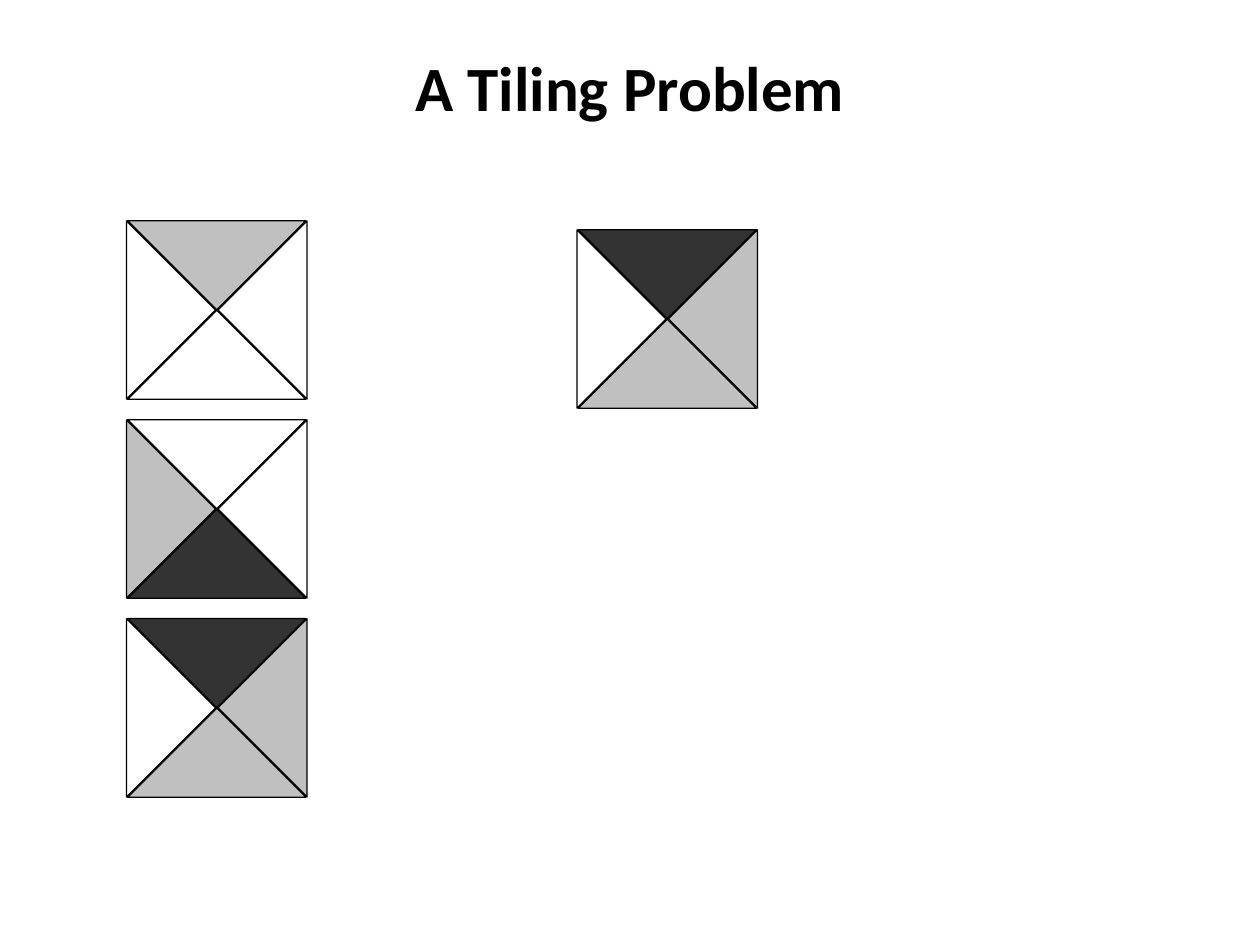
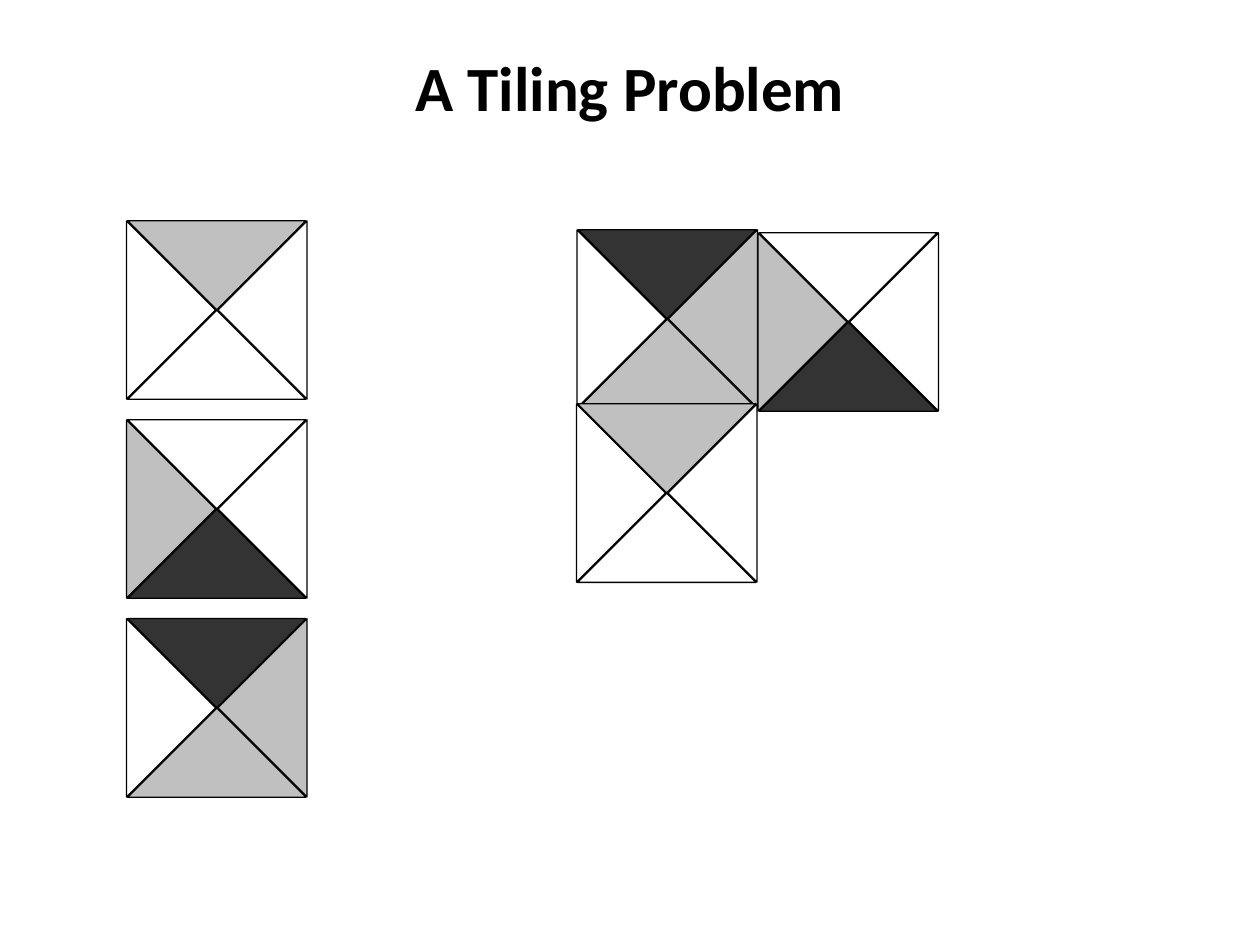
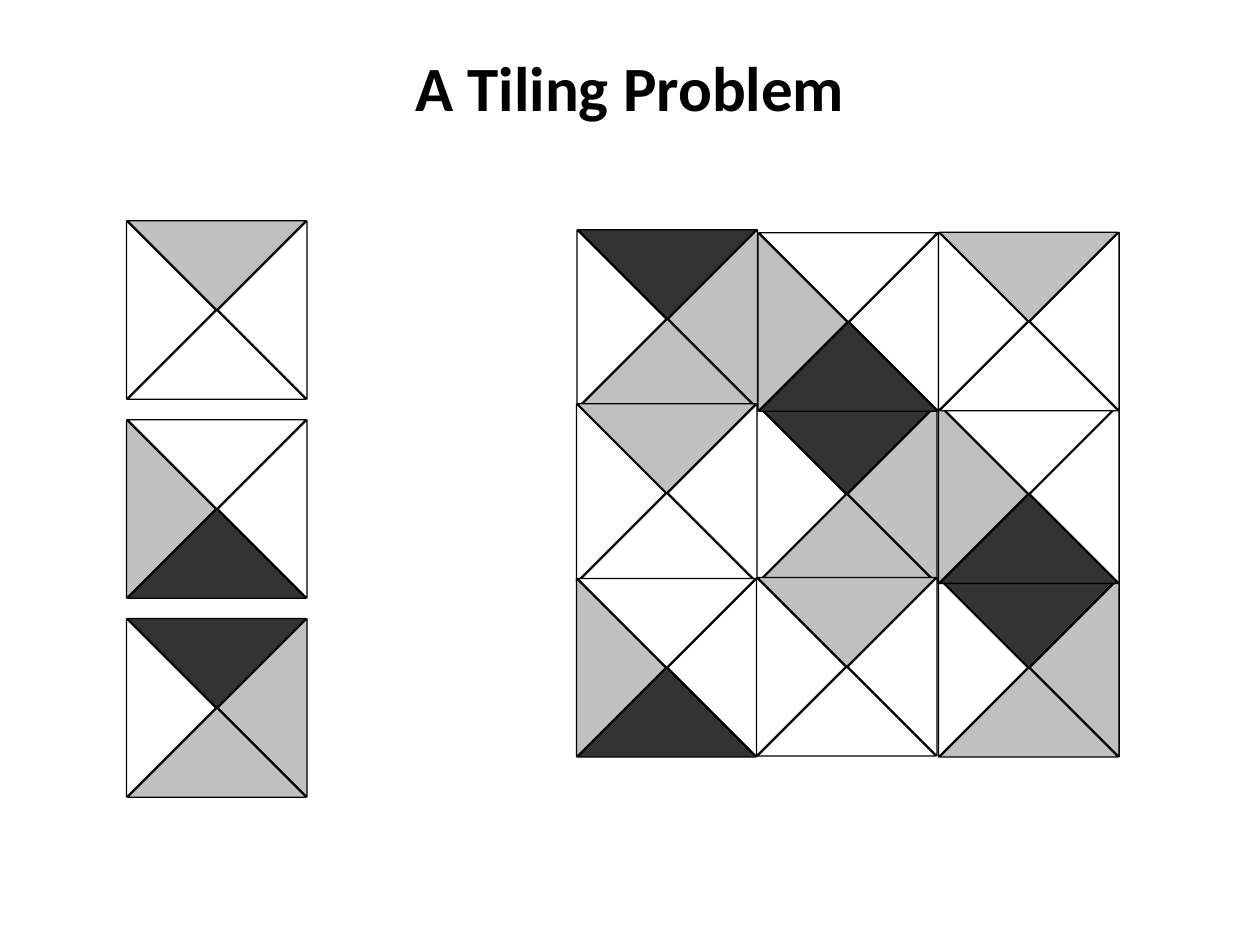
from pptx import Presentation
from pptx.dml.color import RGBColor
from pptx.enum.shapes import MSO_SHAPE
from pptx.enum.text import MSO_ANCHOR, PP_ALIGN
from pptx.util import Cm, Pt

WHITE, GREY, DARK, BLACK = "FFFFFF", "C0C0C0", "333333", "000000"

# Tile colours by side: left, right, bottom, top
GREY_TOP = (WHITE, WHITE, WHITE, GREY)
GREY_LEFT = (GREY, WHITE, DARK, WHITE)
DARK_TOP = (WHITE, GREY, GREY, DARK)

# Distance from a tile's centre to its sides, and the short side of a triangle
HALF_WIDTH, HALF_HEIGHT, TRIANGLE = 1.82, 1.8, 2.54
# Midpoint of each side and rotation that points the triangle to the centre
SIDES = (
    (-HALF_WIDTH, 0, 225),
    (HALF_WIDTH, 0, 45),
    (0, HALF_HEIGHT, 135),
    (0, -HALF_HEIGHT, 315),
)

# The three kinds of tile, stacked at the left
SUPPLY_X, SUPPLY_TOP, SUPPLY_STEP = 4.37, 6.25, 4.01
SUPPLY = (GREY_TOP, GREY_LEFT, DARK_TOP)

# Tiles on the board from back to front: (row, column), kind, centre in cm
BOARD = (
    ((2, 2), DARK_TOP, 17.07, 9.96),
    ((1, 1), DARK_TOP, 13.45, 6.43),
    ((3, 3), DARK_TOP, 20.74, 13.46),
    ((1, 2), GREY_LEFT, 17.1, 6.49),
    ((2, 3), GREY_LEFT, 20.74, 9.96),
    ((2, 1), GREY_TOP, 13.44, 9.94),
    ((3, 1), GREY_LEFT, 13.44, 13.46),
    ((3, 2), GREY_TOP, 17.07, 13.44),
    ((1, 3), GREY_TOP, 20.74, 6.48),
)

# Board places filled on each slide
STAGES = (
    {(1, 1)},
    {(1, 1), (1, 2), (2, 1)},
    {place for place, *_ in BOARD},
)


def color(value):
    return RGBColor.from_string(value)


class TilingDeck:
    font_name = "Calibri"
    title_size = Pt(36)
    line_width = Pt(0.75)

    def __init__(self):
        self.prs = Presentation()
        self.prs.slide_width, self.prs.slide_height = Cm(25.4), Cm(19.05)
        self.slide = None

    def add_slide(self):
        self.slide = self.prs.slides.add_slide(self.prs.slide_layouts[6])

    def title(self, text):
        heading = self.slide.shapes.add_textbox(
            Cm(1.27), Cm(0.76), Cm(22.86), Cm(1.98)).text_frame
        heading.word_wrap = True
        heading.vertical_anchor = MSO_ANCHOR.MIDDLE
        heading.text = text
        paragraph = heading.paragraphs[0]
        paragraph.alignment = PP_ALIGN.CENTER
        paragraph.font.name = self.font_name
        paragraph.font.size = self.title_size
        paragraph.font.bold = True
        paragraph.font.color.rgb = color(BLACK)

    def triangle(self, tile, x, y, rotation, fill):
        """Draw a right triangle whose long side is centred on x, y."""
        side = tile.shapes.add_shape(
            MSO_SHAPE.RIGHT_TRIANGLE,
            Cm(x - TRIANGLE / 2), Cm(y - TRIANGLE / 2),
            Cm(TRIANGLE), Cm(TRIANGLE))
        side.rotation = rotation
        side.shadow.inherit = False
        side.fill.solid()
        side.fill.fore_color.rgb = color(fill)
        side.line.color.rgb = color(BLACK)
        side.line.width = self.line_width

    def tile(self, kind, x, y):
        """Group four triangles into a tile centred on x, y."""
        tile = self.slide.shapes.add_group_shape()
        for (dx, dy, rotation), fill in zip(SIDES, kind):
            self.triangle(tile, x + dx, y + dy, rotation, fill)


def main():
    deck = TilingDeck()
    for filled in STAGES:
        deck.add_slide()
        deck.title("A Tiling Problem")
        # Board
        for place, kind, x, y in BOARD:
            if place in filled:
                deck.tile(kind, x, y)
        # Supply of tiles
        for row, kind in enumerate(SUPPLY):
            deck.tile(kind, SUPPLY_X, SUPPLY_TOP + row * SUPPLY_STEP)
    deck.prs.save("out.pptx")


if __name__ == "__main__":
    main()
